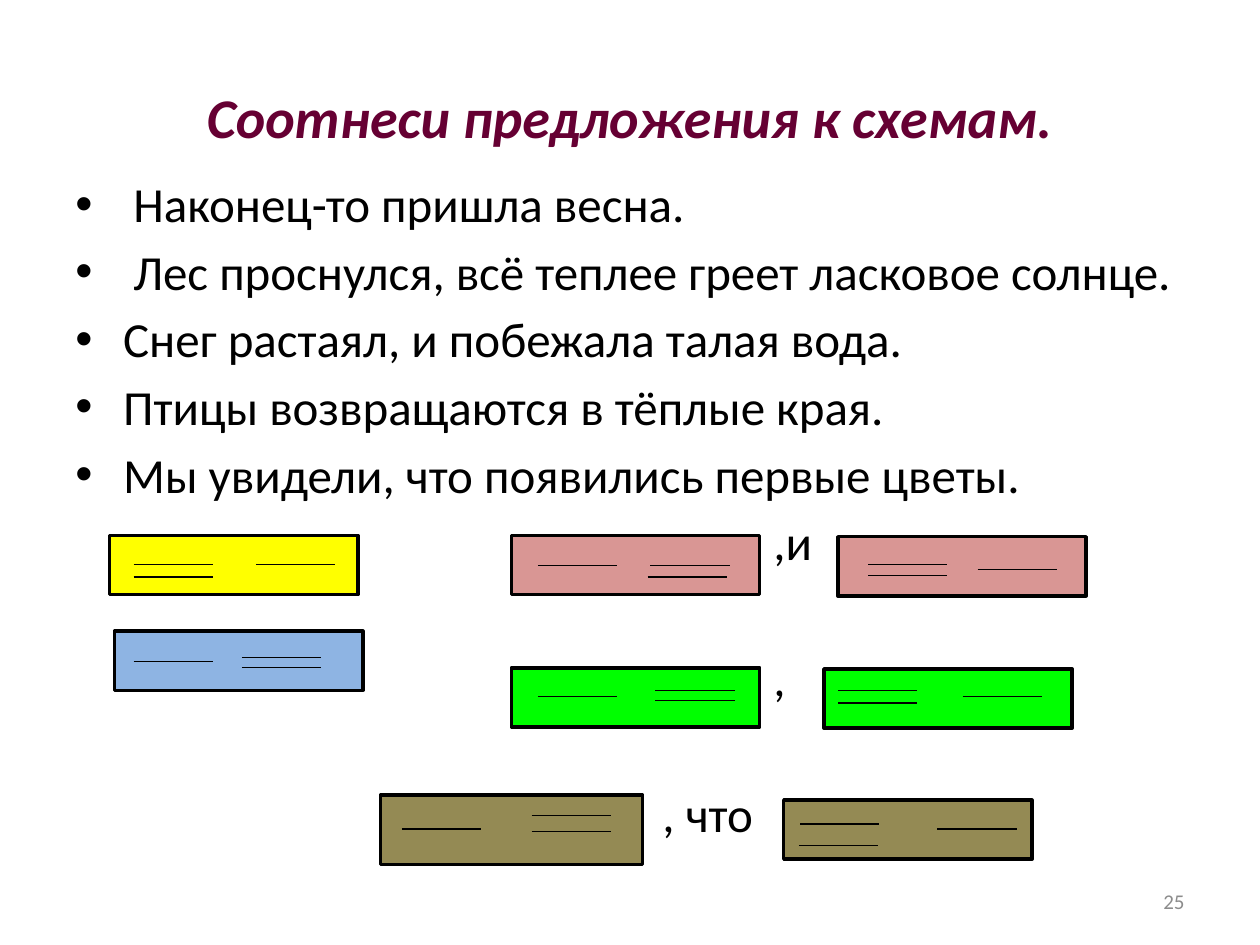
from lxml.etree import SubElement
from pptx import Presentation
from pptx.dml.color import RGBColor
from pptx.enum.shapes import MSO_CONNECTOR as Connector, MSO_SHAPE as Shape
from pptx.enum.text import MSO_ANCHOR as Anchor, PP_ALIGN as Align
from pptx.oxml.ns import qn
from pptx.util import Emu, Pt

PX = 9144
BLACK = RGBColor(0x00, 0x00, 0x00)
PLUM = RGBColor(0x66, 0x00, 0x33)
GRAY = RGBColor(0x8C, 0x8C, 0x8C)
YELLOW = RGBColor(0xFF, 0xFF, 0x00)
BLUE = RGBColor(0x8E, 0xB4, 0xE3)
PINK = RGBColor(0xD9, 0x96, 0x94)
GREEN = RGBColor(0x00, 0xFF, 0x00)
OLIVE = RGBColor(0x94, 0x8A, 0x54)

BULLET_INDENT = 38
SPACED_INDENT = 46
STROKE_LENGTH = 63

SENTENCES = [
    ("Наконец-то пришла весна.", SPACED_INDENT),
    ("Лес проснулся, всё теплее греет ласковое солнце.", SPACED_INDENT),
    ("Снег растаял, и побежала талая вода.", BULLET_INDENT),
    ("Птицы возвращаются в тёплые края.", BULLET_INDENT),
    ("Мы увидели, что появились первые цветы.", BULLET_INDENT),
]
CONJUNCTIONS = [(",и", 554, 5), (",", 554, 44.2), (", что", 466, 44.2)]

SCHEMES = [
    (YELLOW, (87, 425, 197, 47), [(106, 448), (203, 448), (106, 458)]),
    (BLUE, (91, 501, 197, 47), [(106, 525), (192, 522), (192, 530)]),
    (PINK, (406, 425, 197, 47), [(427, 449), (516, 449), (514, 458)]),
    (PINK, (665, 426, 197, 47), [(689, 448), (689, 457), (776, 452)]),
    (GREEN, (406, 530, 197, 47), [(427, 553), (520, 548), (520, 556)]),
    (GREEN, (654, 531, 197, 47), [(665, 548), (665, 558), (764, 553)]),
    (OLIVE, (302, 631, 208, 55), [(319, 658), (422, 647), (422, 660)]),
    (OLIVE, (622, 635, 197, 47), [(635, 654), (634, 671), (744, 658)]),
]


def px(*lengths):
    return [Emu(length * PX) for length in lengths]


class SlideBuilder:
    font_name = "Calibri"

    def __init__(self, slide):
        self.slide = slide

    def text_box(self, box, anchor=Anchor.TOP):
        frame = self.slide.shapes.add_textbox(*px(*box)).text_frame
        frame.word_wrap = True
        frame.vertical_anchor = anchor
        return frame

    def style(self, paragraph, text, size, color, align=Align.LEFT):
        paragraph.text = text
        paragraph.alignment = align
        paragraph.font.name = self.font_name
        paragraph.font.size = Pt(size)
        paragraph.font.color.rgb = color

    def label(self, box, text, size, color, align, emphasis=False):
        paragraph = self.text_box(box, Anchor.MIDDLE).paragraphs[0]
        self.style(paragraph, text, size, color, align)
        paragraph.font.bold = paragraph.font.italic = emphasis

    def body(self, box, sentences, conjunctions):
        frame = self.text_box(box)
        for index, (text, indent) in enumerate(sentences):
            paragraph = frame.add_paragraph() if index else frame.paragraphs[0]
            properties = paragraph._p.get_or_add_pPr()
            properties.set("marL", str(indent * PX))
            properties.set("indent", str(-indent * PX))
            SubElement(properties, qn("a:buFont"), typeface="Arial")
            SubElement(properties, qn("a:buChar"), char="•")
            paragraph.space_before = Pt(5 if index else 0)
            self.style(paragraph, text, 28, BLACK)
        for text, indent, gap in conjunctions:
            paragraph = frame.add_paragraph()
            paragraph._p.get_or_add_pPr().set("marL", str(indent * PX))
            paragraph.space_before = Pt(gap)
            self.style(paragraph, text, 28, BLACK)

    def rectangle(self, box, color):
        shape = self.slide.shapes.add_shape(Shape.RECTANGLE, *px(*box))
        shape.shadow.inherit = False
        shape.fill.solid()
        shape.fill.fore_color.rgb = color
        shape.line.color.rgb = BLACK
        shape.line.width = Pt(2)

    def stroke(self, left, top):
        ends = px(left, top, left + STROKE_LENGTH, top)
        line = self.slide.shapes.add_connector(Connector.STRAIGHT, *ends)
        line.line.color.rgb = BLACK
        line.line.width = Pt(0.75)
        SubElement(line._element.spPr, qn("a:effectLst"))

    def scheme(self, color, box, strokes):
        self.rectangle(box, color)
        for left, top in strokes:
            self.stroke(left, top)


def main():
    presentation = Presentation()
    presentation.slide_width, presentation.slide_height = px(1000, 750)
    builder = SlideBuilder(
        presentation.slides.add_slide(presentation.slide_layouts[6]))
    builder.label((50, 30, 900, 125), "Соотнеси предложения к схемам.",
                  32, PLUM, Align.CENTER, emphasis=True)
    builder.body((50, 133, 900, 591), SENTENCES, CONJUNCTIONS)
    builder.label((717, 695, 233, 40), "25", 12, GRAY, Align.RIGHT)
    for color, box, strokes in SCHEMES:
        builder.scheme(color, box, strokes)
    presentation.save("out.pptx")


if __name__ == "__main__":
    main()
